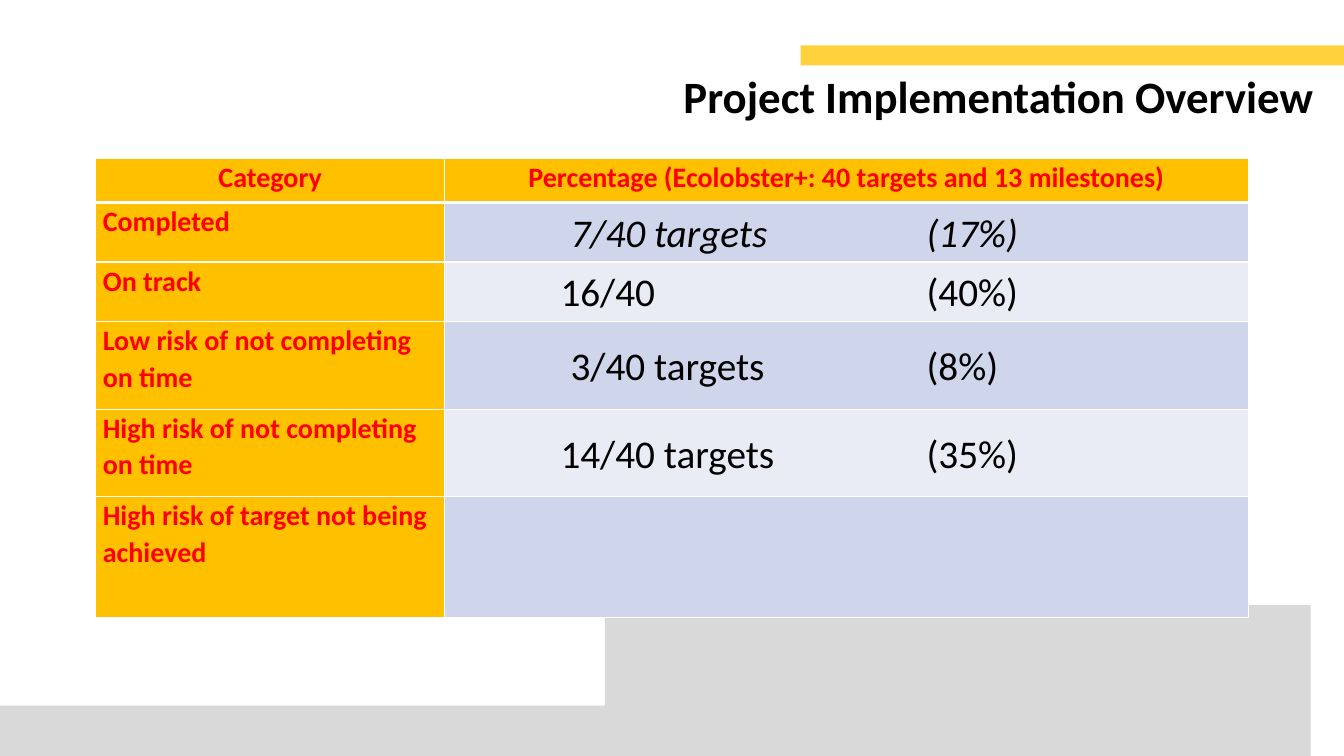
from lxml import etree
from pptx import Presentation
from pptx.dml.color import RGBColor
from pptx.enum.shapes import MSO_SHAPE
from pptx.enum.text import MSO_ANCHOR, PP_ALIGN
from pptx.oxml.ns import qn
from pptx.util import Emu, Inches, Pt

RECTANGLE = MSO_SHAPE.RECTANGLE
MIDDLE, TOP = MSO_ANCHOR.MIDDLE, MSO_ANCHOR.TOP
CENTER, JUSTIFY, LEFT = PP_ALIGN.CENTER, PP_ALIGN.JUSTIFY, PP_ALIGN.LEFT

TITLE = "Project Implementation Overview"
HEADINGS = ("Category", "Percentage (Ecolobster+: 40 targets and 13 milestones)")
# category, count, share, italic
RESULTS = [
    ("Completed", "7/40 targets", "(17%)", True),
    ("On track", "16/40", "(40%)", False),
    ("Low risk of not completing on time", "3/40 targets", "(8%)", False),
    ("High risk of not completing on time", "14/40 targets", "(35%)", False),
    ("High risk of target not being achieved", "", "", False),
]

SLIDE_W, SLIDE_H = 13.33, 7.5
TABLE_LEFT, TABLE_TOP = 0.95, 1.57
COLUMNS = (3.46, 7.97)
ROWS = (0.44, 0.59, 0.59, 0.87, 0.87, 1.2)
COUNT_TABS = {1: 1.18, 2: 1.08}  # by number of digits
SHARE_TAB = 4.71
FONT = "Calibri"
BLACK, RED, WHITE, GOLD = "000000", "FF0000", "FFFFFF", "FFC000"
BANDS = ("CFD5EA", "E9EBF5")
ACCENT, WAVE_GREY = "FFD13C", "D9D9D9"

# Upper edge of the wave, right to left: each curve runs on from the last point
WAVE_START = (SLIDE_W, 6.46)
WAVE_CURVES = [
    ((11.65, 6.22), (9.02, 6.16), (5.02, 6.63)),
    ((1.33, 7.07), (0.26, 6.68), (-0.02, 6.51)),
]
CURVE_STEPS = 40


def color(value):
    return RGBColor.from_string(value)


def paint(shape, fill):
    shape.shadow.inherit = False
    shape.fill.solid()
    shape.fill.fore_color.rgb = color(fill)
    shape.line.fill.background()


def style(paragraph, size, ink, bold=False, italic=False):
    for run in paragraph.runs:
        font = run.font
        font.name, font.size = FONT, Pt(size)
        font.bold, font.italic = bold, italic
        font.color.rgb = color(ink)


def curve_points(start, first, second, end):
    """Points along a cubic Bezier curve, without its start."""
    for step in range(1, CURVE_STEPS + 1):
        t = step / CURVE_STEPS
        u = 1 - t
        yield tuple(
            u**3 * a + 3 * u * u * t * b + 3 * u * t * t * c + t**3 * d
            for a, b, c, d in zip(start, first, second, end)
        )


def add_wave(shapes):
    edge = [WAVE_START]
    for curve in WAVE_CURVES:
        edge.extend(curve_points(edge[-1], *curve))
    outline = edge + [(edge[-1][0], SLIDE_H)]
    builder = shapes.build_freeform(SLIDE_W, SLIDE_H, scale=Inches(1))
    builder.add_line_segments(outline, close=True)
    paint(builder.convert_to_shape(), WAVE_GREY)


def set_borders(cell, bottom, top):
    properties = cell._tc.get_or_add_tcPr()
    widths = (("lnL", 1), ("lnR", 1), ("lnT", top), ("lnB", bottom))
    for position, (side, width) in enumerate(widths):
        line = etree.Element(qn(f"a:{side}"), w=str(Pt(width)))
        fill = etree.SubElement(line, qn("a:solidFill"))
        etree.SubElement(fill, qn("a:srgbClr"), val=WHITE)
        properties.insert(position, line)


def add_tabs(paragraph, stops):
    tabs = etree.SubElement(paragraph._p.get_or_add_pPr(), qn("a:tabLst"))
    for stop in stops:
        etree.SubElement(tabs, qn("a:tab"), pos=str(Inches(stop)), algn="l")


def fill_cell(cell, row, text, fill, align, anchor=TOP):
    """Set text, fill, margins and borders; return the paragraph to style."""
    cell.margin_left = cell.margin_right = Inches(0.07)
    cell.margin_top = cell.margin_bottom = Emu(0)
    cell.vertical_anchor = anchor
    cell.fill.solid()
    cell.fill.fore_color.rgb = color(fill)
    set_borders(cell, bottom=3 if row == 0 else 1, top=3 if row == 1 else 1)
    paragraph = cell.text_frame.paragraphs[0]
    paragraph.text = text
    paragraph.alignment = align
    paragraph.line_spacing = 1.07
    return paragraph


def add_results(shapes):
    table = shapes.add_table(
        len(ROWS), len(COLUMNS), Inches(TABLE_LEFT), Inches(TABLE_TOP),
        Inches(sum(COLUMNS)), Inches(sum(ROWS)),
    ).table
    for column, width in zip(table.columns, COLUMNS):
        column.width = Inches(width)
    for row, height in zip(table.rows, ROWS):
        row.height = Inches(height)

    for column, heading in enumerate(HEADINGS):
        style(fill_cell(table.cell(0, column), 0, heading, GOLD, CENTER), 20, RED, True)

    for row, (category, count, share, italic) in enumerate(RESULTS, start=1):
        label = fill_cell(table.cell(row, 0), row, category, GOLD, LEFT)
        style(label, 20, RED, bold=True)
        text = f"\t{count}\t{share}" if count else ""
        band = BANDS[(row - 1) % 2]
        value = fill_cell(table.cell(row, 1), row, text, band, JUSTIFY, MIDDLE)
        if count:
            digits = len(count.split("/")[0])
            add_tabs(value, (COUNT_TABS[digits], SHARE_TAB))
            style(value, 28, BLACK, italic=italic)


def main():
    deck = Presentation()
    deck.slide_width, deck.slide_height = Inches(SLIDE_W), Inches(SLIDE_H)
    shapes = deck.slides.add_slide(deck.slide_layouts[6]).shapes

    add_wave(shapes)
    accent = shapes.add_shape(
        RECTANGLE, Inches(7.94), Inches(0.45), Inches(SLIDE_W - 7.94), Inches(0.2)
    )
    paint(accent, ACCENT)

    title = shapes.add_textbox(Inches(6.68), Inches(0.63), Inches(6.89), Inches(0.64))
    title.text_frame.word_wrap = True
    title.text_frame.text = TITLE
    style(title.text_frame.paragraphs[0], 32, BLACK, bold=True)

    add_results(shapes)
    deck.save("out.pptx")


if __name__ == "__main__":
    main()
